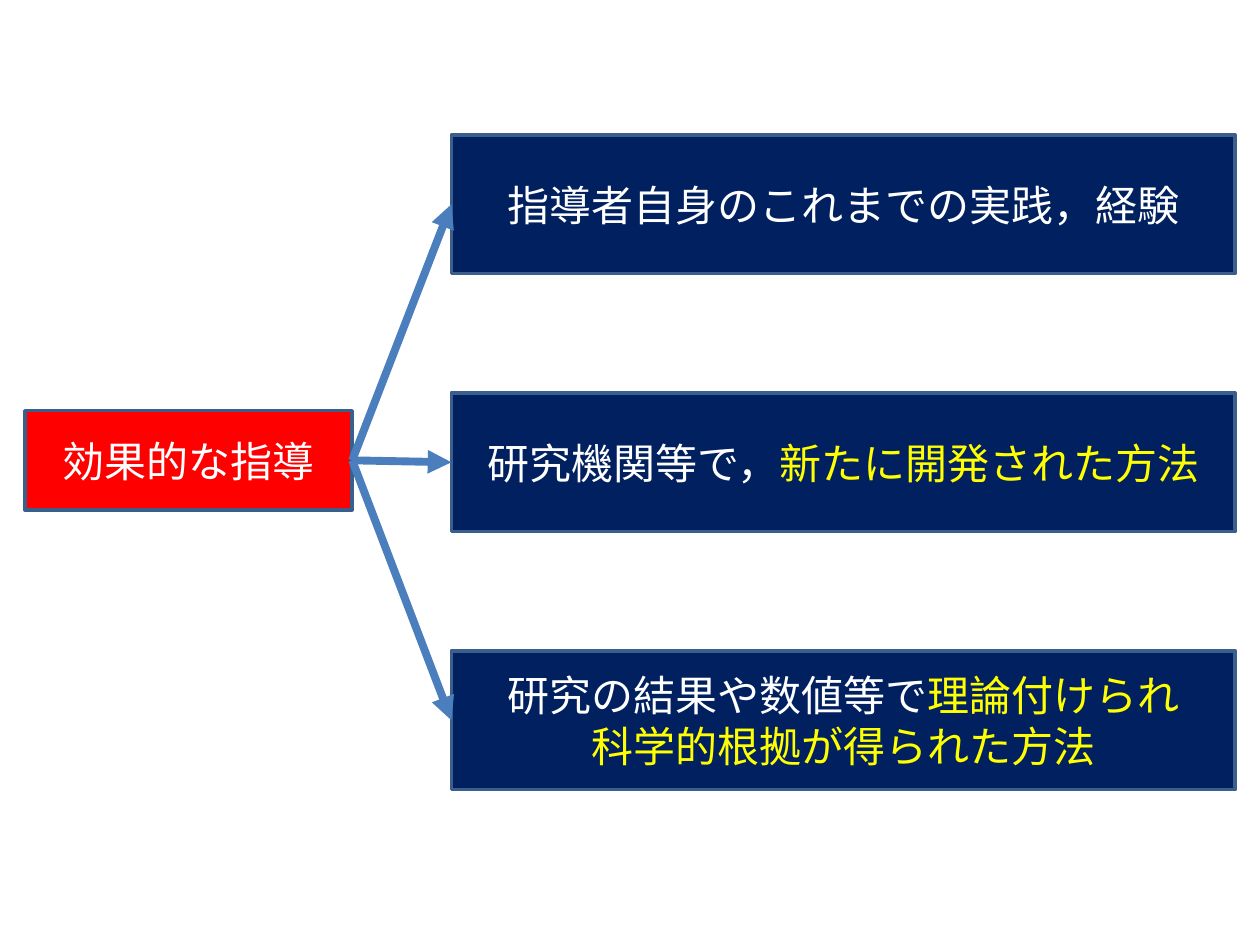
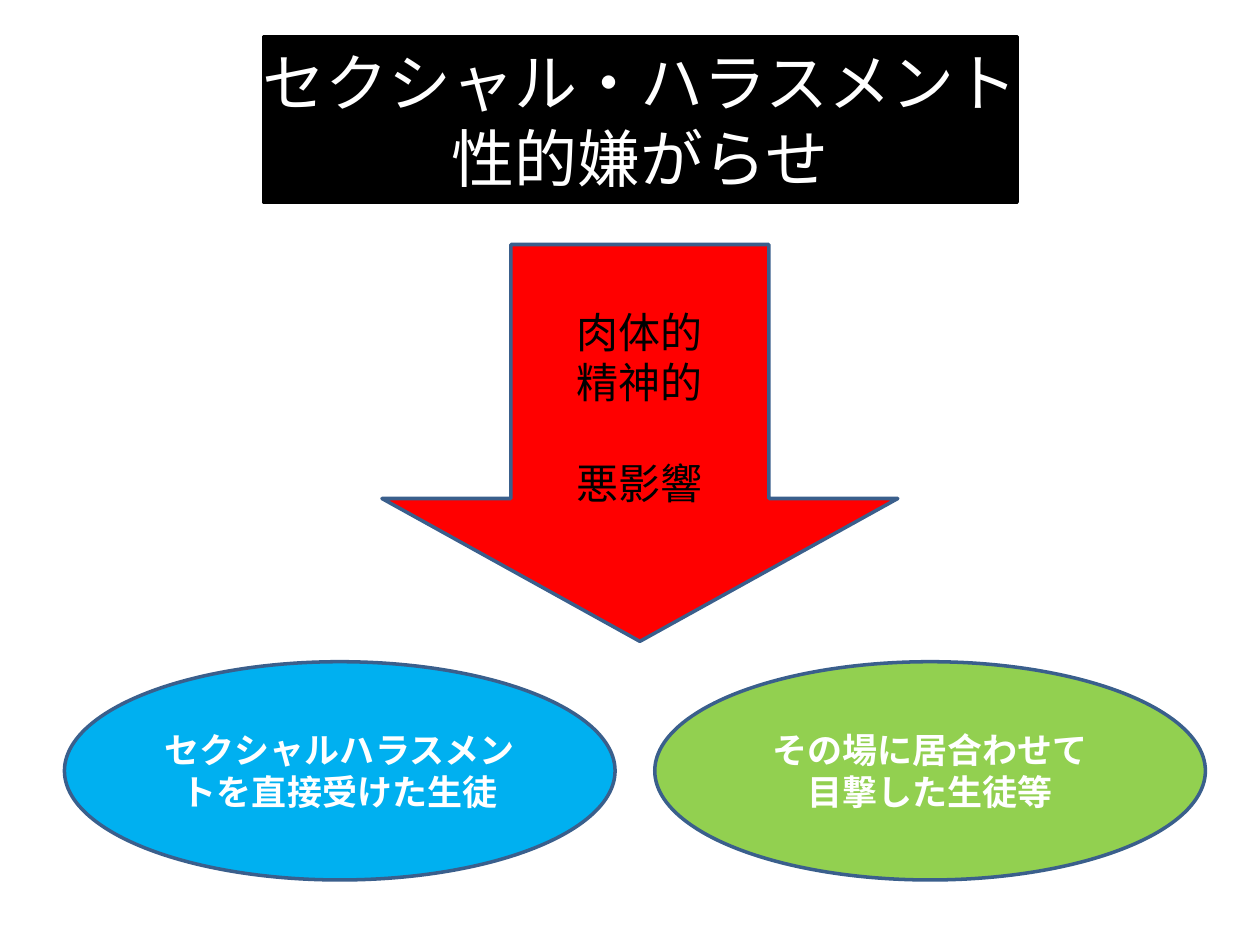
import collections

import pptx
import pptx.dml.color
import pptx.enum.shapes
import pptx.enum.text
import pptx.oxml
import pptx.oxml.ns
import pptx.util

Cm = pptx.util.Cm
Pt = pptx.util.Pt
RGBColor = pptx.dml.color.RGBColor
SHAPES = pptx.enum.shapes.MSO_SHAPE

WHITE = RGBColor(0xFF, 0xFF, 0xFF)
BLACK = RGBColor(0x00, 0x00, 0x00)
RED = RGBColor(0xFF, 0x00, 0x00)
NAVY = RGBColor(0x00, 0x20, 0x60)
YELLOW = RGBColor(0xFF, 0xFF, 0x00)
SKY = RGBColor(0x00, 0xB0, 0xF0)
GREEN = RGBColor(0x92, 0xD0, 0x50)
OUTLINE = RGBColor(0x3A, 0x5F, 0x8C)
ARROW_BLUE = RGBColor(0x4B, 0x7E, 0xBC)
FONT = "Calibri"

Box = collections.namedtuple("Box", "left top width height")


def add_panel(slide, kind, box, fill, lines, size=24, color=WHITE, bold=False, outline=OUTLINE):
    """Add a filled shape; each line is a list of (text, colour or None) parts."""
    panel = slide.shapes.add_shape(kind, *(Cm(length) for length in box))
    panel.shadow.inherit = False
    panel.fill.solid()
    panel.fill.fore_color.rgb = fill
    panel.line.color.rgb = outline
    panel.line.width = Pt(2)
    frame = panel.text_frame
    frame.word_wrap = True
    frame.vertical_anchor = pptx.enum.text.MSO_ANCHOR.MIDDLE
    for index, parts in enumerate(lines):
        paragraph = frame.add_paragraph() if index else frame.paragraphs[0]
        paragraph.alignment = pptx.enum.text.PP_ALIGN.CENTER
        for text, accent in parts:
            run = paragraph.add_run()
            run.text = text
            run.font.name = FONT
            run.font.size = Pt(size)
            run.font.bold = bold
            run.font.color.rgb = accent or color
    return panel


def plain(*lines):
    """Turn strings into lines without an accent colour."""
    return [[(line, None)] for line in lines]


def link(slide, source, target):
    """Draw an arrow from the right side of source to the left side of target."""
    arrow = slide.shapes.add_connector(pptx.enum.shapes.MSO_CONNECTOR.STRAIGHT, 0, 0, 0, 0)
    arrow.begin_connect(source, 3)
    arrow.end_connect(target, 1)
    arrow.line.color.rgb = ARROW_BLUE
    arrow.line.width = Pt(4.5)
    head = pptx.oxml.parse_xml(f'<a:tailEnd {pptx.oxml.ns.nsdecls("a")} type="triangle"/>')
    arrow.line._get_or_add_ln().append(head)
    no_effects = pptx.oxml.parse_xml(f'<a:effectLst {pptx.oxml.ns.nsdecls("a")}/>')
    arrow._element.spPr.append(no_effects)


def build_guidance(slide, box):
    """Show effective guidance branching to its three sources."""
    sources = [
        plain("指導者自身のこれまでの実践，経験"),
        [[("研究機関等で，", None), ("新たに開発された方法", YELLOW)]],
        [[("研究の結果や数値等で", None), ("理論付けられ", YELLOW)],
         [("科学的根拠が得られた方法", YELLOW)]],
    ]
    guidance = add_panel(slide, SHAPES.RECTANGLE, Box(box.left, box.top + 5.56, 6.6, 2),
                         RED, plain("効果的な指導"))
    source_width, source_height = 15.8, 2.8
    pitch = (box.height - source_height) / (len(sources) - 1)
    for index, lines in enumerate(sources):
        source_box = Box(box.left + box.width - source_width, box.top + index * pitch,
                         source_width, source_height)
        source = add_panel(slide, SHAPES.RECTANGLE, source_box, NAVY, lines)
        link(slide, guidance, source)


def build_harassment(slide, box):
    """Show harassment leading down to the two groups of affected students."""
    heading = add_panel(slide, SHAPES.RECTANGLE, Box(box.left + 4.01, box.top, 15.2, 3.33), BLACK,
                        plain("セクシャル・ハラスメント", "性的嫌がらせ"), size=36, outline=BLACK)
    heading.text_frame.word_wrap = False

    victim_width, victim_height = 11.1, 4.4
    victims = [
        (SKY, plain("セクシャルハラスメントを直接受けた生徒")),
        (GREEN, plain("その場に居合わせて", "目撃した生徒等")),
    ]
    for index, (fill, lines) in enumerate(victims):
        victim_box = Box(box.left + index * (box.width - victim_width),
                         box.top + box.height - victim_height, victim_width, victim_height)
        add_panel(slide, SHAPES.OVAL, victim_box, fill, lines, size=20, bold=True)

    impact = add_panel(slide, SHAPES.DOWN_ARROW, Box(box.left + 6.4, box.top + 4.19, 10.4, 8), RED,
                       plain("肉体的", "精神的", "悪影響"), color=BLACK)
    impact.adjustments[0] = 0.5
    impact.adjustments[1] = 0.36
    impact.text_frame.paragraphs[-1].space_before = Pt(29)


def main():
    """Build both slides and save them."""
    deck = pptx.Presentation()
    deck.slide_width = Cm(25.4)
    deck.slide_height = Cm(19.05)
    pages = [
        (build_guidance, Box(0.5, 2.72, 24.4, 13.2)),
        (build_harassment, Box(1.3, 0.74, 23, 17)),
    ]
    for build, box in pages:
        build(deck.slides.add_slide(deck.slide_layouts[6]), box)
    deck.save("out.pptx")


if __name__ == "__main__":
    main()
